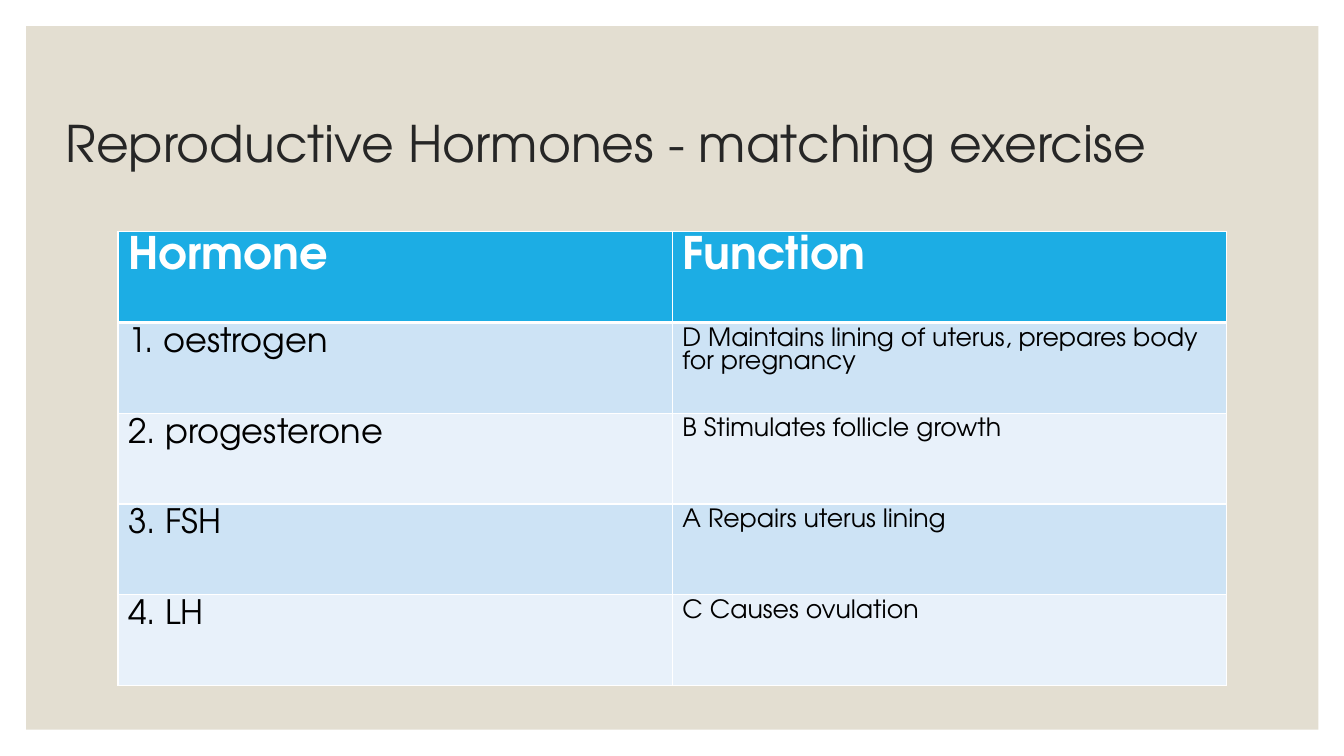
from lxml import etree
from pptx import Presentation
from pptx.dml import color
from pptx.enum import shapes, text
from pptx.oxml import ns
from pptx.util import Pt

FONT = "TeX Gyre Adventor"


def paint(fill, value):
    fill.solid()
    fill.fore_color.rgb = color.RGBColor.from_string(value)


def style(paragraph, size, value, bold=False):
    for run in paragraph.runs:
        run.font.name = FONT
        run.font.size = Pt(size)
        run.font.bold = bold
        paint(run.font.fill, value)


deck = Presentation()
deck.slide_width, deck.slide_height = Pt(960), Pt(540)
slide = deck.slides.add_slide(deck.slide_layouts[5])
paint(slide.background.fill, "FFFFFF")

panel = slide.shapes.add_shape(
    shapes.MSO_SHAPE.RECTANGLE, Pt(18.72), Pt(18.72), Pt(923.04), Pt(502.56))
panel.shadow.inherit = False
paint(panel.fill, "E3DED1")
panel.line.fill.background()

heading = slide.shapes.title
heading._element.addprevious(panel._element)
heading.left, heading.top, heading.width, heading.height = Pt(39.6), Pt(50.4), Pt(836.64), Pt(108)
heading.text_frame.text = "Reproductive Hormones - matching exercise"
heading.text_frame.word_wrap = True
heading.text_frame.auto_size = text.MSO_AUTO_SIZE.NONE
heading.text_frame.vertical_anchor = text.MSO_ANCHOR.MIDDLE
heading_line = heading.text_frame.paragraphs[0]
heading_line.alignment = text.PP_ALIGN.LEFT
heading_line.line_spacing = 0.9
style(heading_line, 36, "262626")

hormones = [
    ("Hormone", "Function"),
    ("1. oestrogen", "D Maintains lining of uterus, prepares body for pregnancy"),
    ("2. progesterone", "B Stimulates follicle growth"),
    ("3. FSH", "A Repairs uterus lining"),
    ("4. LH", "C Causes ovulation"),
]
matching = slide.shapes.add_table(
    len(hormones), 2, Pt(84.24), Pt(165.6), Pt(792), Pt(324)).table

for row, entries in enumerate(hormones):
    for column, entry in enumerate(entries):
        cell = matching.cell(row, column)
        cell.text_frame.text = entry
        line = cell.text_frame.paragraphs[0]
        if row == 0:
            style(line, 32, "FFFFFF", True)
            band = "1CADE4"
        else:
            style(line, (24, 18)[column], "000000")
            band = "CDE3F5" if row % 2 else "E8F1FA"

        properties = cell._tc.get_or_add_tcPr()
        for side in ("lnL", "lnR", "lnT", "lnB"):
            header_rule = (row, side) in ((0, "lnB"), (1, "lnT"))
            border = etree.SubElement(properties, ns.qn("a:" + side), w=str(Pt(3 if header_rule else 1)))
            border_fill = etree.SubElement(border, ns.qn("a:solidFill"))
            etree.SubElement(border_fill, ns.qn("a:srgbClr"), val="FFFFFF")
        paint(cell.fill, band)

deck.save("out.pptx")
